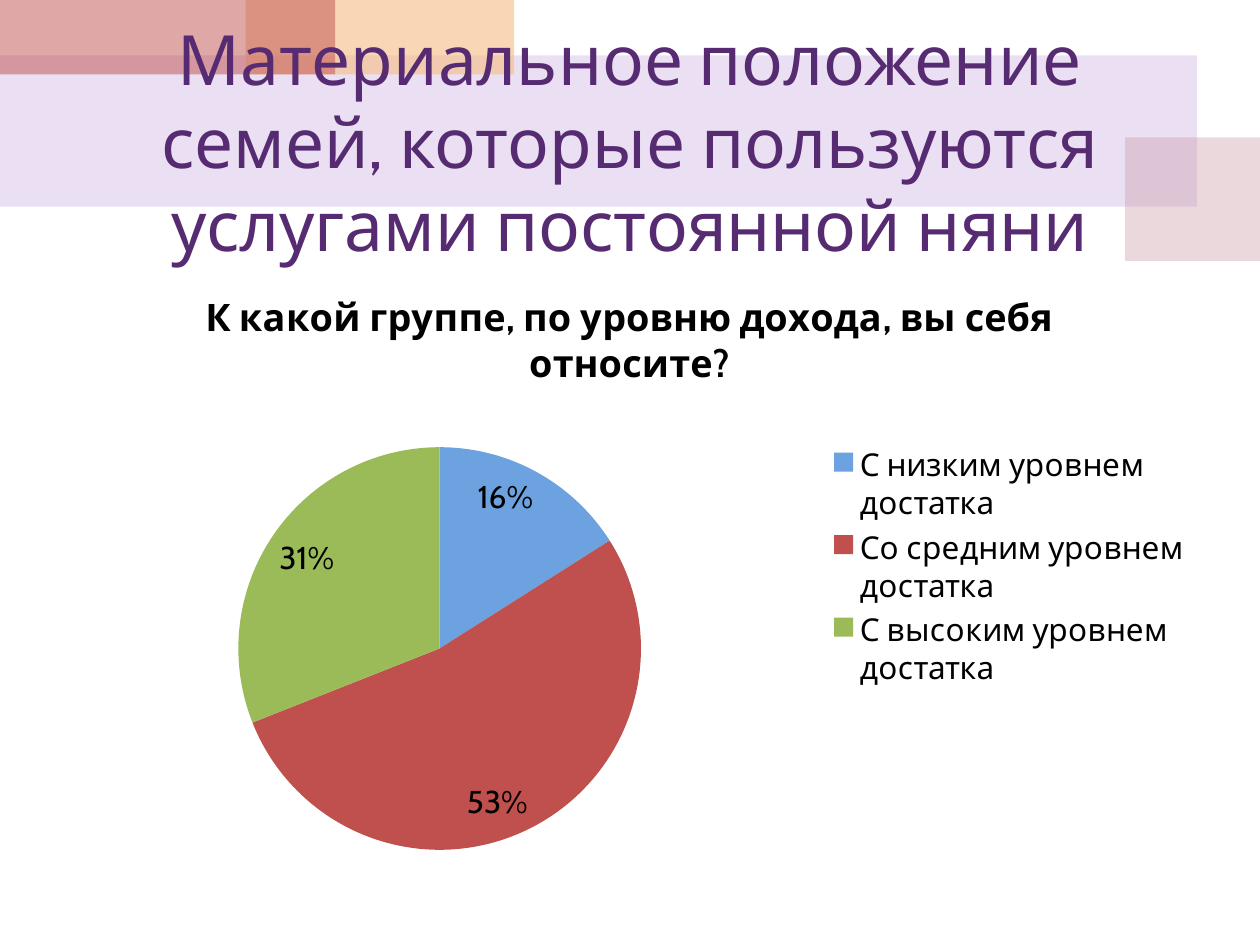
from typing import NamedTuple

from lxml.etree import SubElement
from pptx import Presentation
from pptx.chart.data import CategoryChartData
from pptx.dml.color import RGBColor
from pptx.enum.chart import XL_CHART_TYPE, XL_LABEL_POSITION, XL_LEGEND_POSITION
from pptx.enum.shapes import MSO_SHAPE
from pptx.enum.text import MSO_ANCHOR, PP_ALIGN
from pptx.oxml import parse_xml
from pptx.oxml.ns import nsdecls, qn
from pptx.util import Pt

FONT = "Cabin"
COLORS = {
    "lilac": "BF98D8", "rose": "CC9EAC", "peach": "F5BC83", "red": "C0504D",
    "purple": "562B71", "blue": "6BA2DF", "green": "9BBB59", "black": "000000",
}


class Band(NamedTuple):
    left: float
    top: float
    width: float
    height: float
    color: str
    opacity: int  # percent


class Income(NamedTuple):
    group: str
    share: float
    color: str


BANDS = [
    Band(0, 31.7, 684, 86.4, "lilac", 30),
    Band(643, 78.5, 77, 70.6, "rose", 40),
    Band(140.4, 0, 153.4, 42.5, "peach", 60),
    Band(0, 0, 191.5, 42.5, "red", 50),
]
INCOMES = [
    Income("С низким уровнем достатка", 0.16, "blue"),
    Income("Со средним уровнем достатка", 0.53, "red"),
    Income("С высоким уровнем достатка", 0.31, "green"),
]


def rgb(name: str) -> RGBColor:
    return RGBColor.from_string(COLORS[name])


def style_font(font, size: float, color: str, bold: bool = False) -> None:
    font.name, font.size, font.bold = FONT, Pt(size), bold
    font.color.rgb = rgb(color)


def draw_band(slide, band: Band) -> None:
    rect = slide.shapes.add_shape(
        MSO_SHAPE.RECTANGLE, Pt(band.left), Pt(band.top), Pt(band.width), Pt(band.height))
    rect.shadow.inherit = False
    rect.line.fill.background()
    rect.fill.solid()
    rect.fill.fore_color.rgb = rgb(band.color)
    tint = rect.fill._xPr.find(qn("a:solidFill"))[0]
    SubElement(tint, qn("a:alpha"), val=str(band.opacity * 1000))


def draw_heading(slide, text: str) -> None:
    heading = slide.shapes.add_textbox(Pt(36), Pt(42.5), Pt(648), Pt(75.6)).text_frame
    heading.word_wrap = True
    heading.vertical_anchor = MSO_ANCHOR.MIDDLE
    line = heading.paragraphs[0]
    line.text = text
    line.alignment = PP_ALIGN.CENTER
    style_font(line.font, 39.6, "purple")


def place_plot(chart, x: float, y: float, w: float, h: float) -> None:
    """Fix the inner plot area, in fractions of the chart."""
    sides = "".join(f'<c:{tag} val="{value}"/>' for tag, value in
                    [("xMode", "edge"), ("yMode", "edge"),
                     ("x", x), ("y", y), ("w", w), ("h", h)])
    plot_area = chart._chartSpace.chart.plotArea
    for old in plot_area.findall(qn("c:layout")):
        plot_area.remove(old)
    plot_area.insert(0, parse_xml(
        f'<c:layout {nsdecls("c")}><c:manualLayout><c:layoutTarget val="inner"/>'
        f'{sides}</c:manualLayout></c:layout>'))


def draw_pie(slide, question: str, incomes: list[Income]) -> None:
    data = CategoryChartData(number_format="0%")
    data.categories = [income.group for income in incomes]
    data.add_series("Series 1", [income.share for income in incomes])
    chart = slide.shapes.add_chart(
        XL_CHART_TYPE.PIE, Pt(31), Pt(151.2), Pt(657.4), Pt(345.6), data).chart
    style_font(chart.font, 18, "black")

    # Question above the pie
    chart.has_title = True
    title = chart.chart_title.text_frame.paragraphs[0]
    title.text = question
    style_font(title.font, 21.6, "black", bold=True)
    chart.chart_title.include_in_layout = False

    # Legend on the right
    chart.has_legend = True
    chart.legend.position = XL_LEGEND_POSITION.RIGHT
    chart.legend.include_in_layout = False
    style_font(chart.legend.font, 18, "black")

    # Slices and their shares
    place_plot(chart, 0.16, 0.3, 0.35, 0.67)
    pie = chart.plots[0]
    pie.vary_by_categories = True
    for index, income in enumerate(incomes):
        fill = pie.series[0].points[index].format.fill
        fill.solid()
        fill.fore_color.rgb = rgb(income.color)
    pie.has_data_labels = True
    shares = pie.data_labels
    shares.show_value = True
    shares.show_percentage = False
    shares.number_format, shares.number_format_is_linked = "0%", False
    shares.position = XL_LABEL_POSITION.INSIDE_END
    style_font(shares.font, 18, "black")


def main() -> None:
    deck = Presentation()
    deck.slide_width, deck.slide_height = Pt(720), Pt(540)
    slide = deck.slides.add_slide(deck.slide_layouts[6])
    for band in BANDS:
        draw_band(slide, band)
    draw_heading(
        slide, "Материальное положение семей, которые пользуются услугами постоянной няни")
    draw_pie(slide, "К какой группе, по уровню дохода, вы себя относите?", INCOMES)
    deck.save("out.pptx")


if __name__ == "__main__":
    main()
